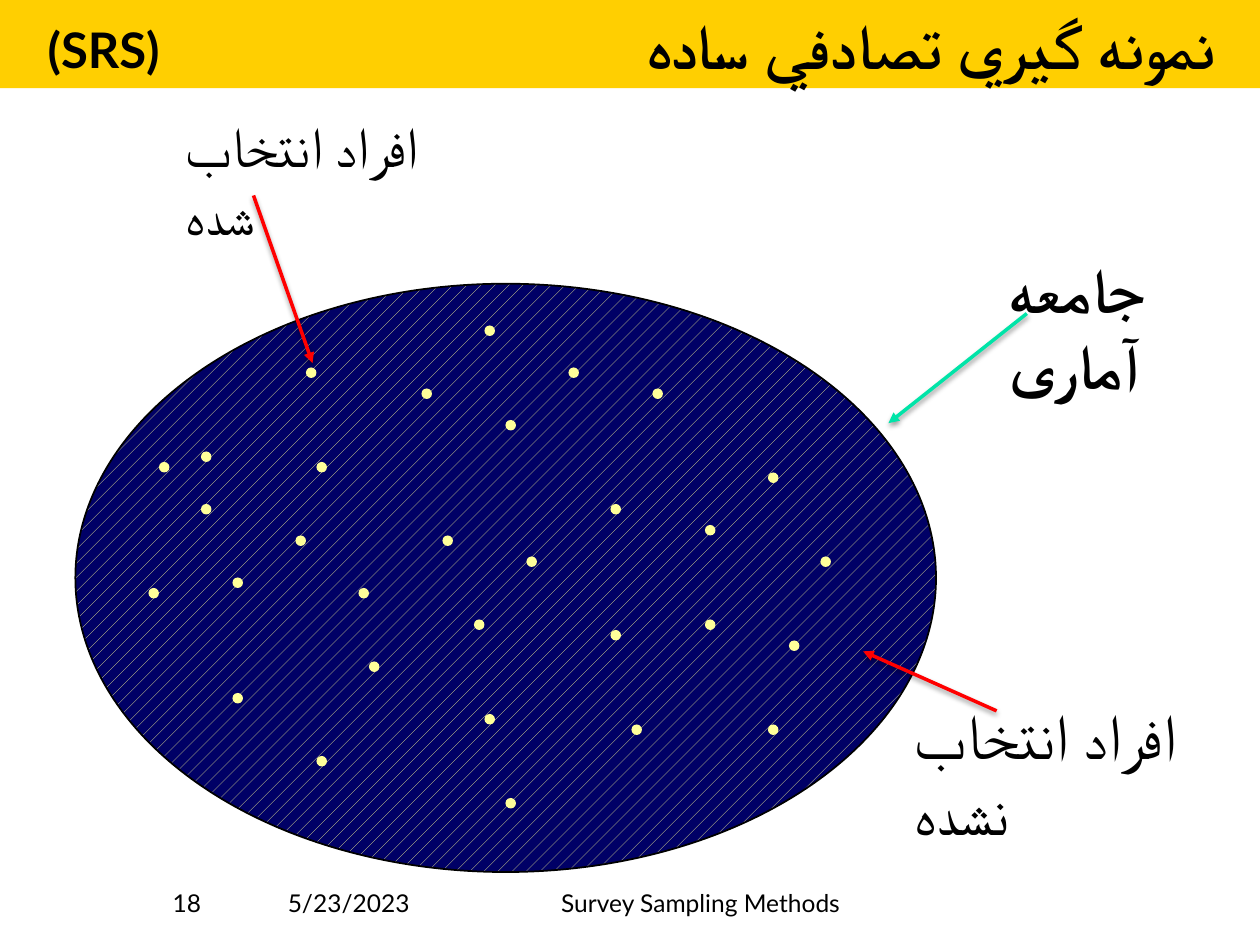
from lxml.etree import SubElement
from pptx import Presentation
from pptx.dml.color import RGBColor
from pptx.enum.dml import MSO_PATTERN
from pptx.enum.shapes import MSO_CONNECTOR, MSO_SHAPE
from pptx.enum.text import MSO_ANCHOR, PP_ALIGN
from pptx.oxml.ns import qn
from pptx.util import Cm, Pt

BLACK = RGBColor(0x00, 0x00, 0x00)
NAVY = RGBColor(0x00, 0x00, 0x66)
CREAM = RGBColor(0xFF, 0xFF, 0x99)
GOLD = RGBColor(0xFF, 0xCF, 0x01)
RED = RGBColor(0xFF, 0x00, 0x00)
GREEN = RGBColor(0x00, 0xE4, 0xA8)
FONT = "Lato"

TITLE = "نمونه گيري تصادفي ساده"
ABBREVIATION = "(SRS)"

# Labels: text, left, top, width, height (cm), size, bold
LABELS = [
    ("جامعه آماری", 20.09, 4.93, 4.19, 3.33, 36, True),
    ("افراد انتخاب شده", 3.51, 2.13, 6.27, 1.63, 32, False),
    ("افراد انتخاب نشده", 18.21, 13.92, 7.19, 1.8, 36, False),
]

# Arrows: start x, y, end x, y (cm), colour
ARROWS = [
    (5.11, 3.94, 6.3, 7.32, RED),
    (20.7, 6.32, 17.91, 8.53, GREEN),
    (20.09, 14.33, 17.4, 13.13, RED),
]

# Footer: text, left, width (cm), alignment
FOOTERS = [
    ("18", 3.23, 5.28, PP_ALIGN.LEFT),
    ("5/23/2023", 3.23, 5.28, PP_ALIGN.RIGHT),
    ("Survey Sampling Methods", 10.1, 8.05, PP_ALIGN.CENTER),
]

# Members of the population: column, row on a grid of dot-sized cells
DOT = 2.54 / 12
GRID_LEFT = 2.57
MEMBERS = [
    (10, 55), (18, 72), (10, 66), (22, 56), (7, 43), (7, 48), (2, 56),
    (3, 44), (18, 44), (28, 37), (46, 48), (42, 35), (30, 51), (38, 53),
    (33, 59), (16, 51), (48, 69), (34, 68), (50, 37), (36, 40), (61, 69),
    (63, 61), (66, 53), (61, 45), (17, 35), (23, 63), (34, 31), (36, 76),
    (55, 50), (55, 59), (46, 60),
]


def add_preset(page, preset, left, top, width, height):
    shape = page.shapes.add_shape(preset, Cm(left), Cm(top), Cm(width), Cm(height))
    shape.shadow.inherit = False
    shape.line.fill.background()
    return shape


def write(shape, text, size, bold=False, align=PP_ALIGN.LEFT,
          anchor=MSO_ANCHOR.TOP, rtl=False):
    frame = shape.text_frame
    frame.word_wrap = True
    frame.vertical_anchor = anchor
    para = frame.paragraphs[0]
    para.text = text
    para.alignment = align
    para.font.name = FONT
    para.font.size = Pt(size)
    para.font.bold = bold
    para.font.color.rgb = BLACK
    # Persian letters take the complex-script font
    SubElement(para.font._rPr, qn("a:cs"), typeface=FONT)
    if rtl:
        para._p.get_or_add_pPr().set("rtl", "1")


def add_text(page, left, top, width, height, *args, **options):
    box = page.shapes.add_textbox(Cm(left), Cm(top), Cm(width), Cm(height))
    write(box, *args, **options)


def add_arrow(page, x1, y1, x2, y2, color):
    arrow = page.shapes.add_connector(
        MSO_CONNECTOR.STRAIGHT, Cm(x1), Cm(y1), Cm(x2), Cm(y2))
    arrow.line.color.rgb = color
    arrow.line.width = Pt(2)
    SubElement(arrow.line._get_or_add_ln(), qn("a:tailEnd"), type="triangle")
    # Soft shadow straight below the line
    effects = SubElement(arrow._element.spPr, qn("a:effectLst"))
    shadow = SubElement(effects, qn("a:outerShdw"), blurRad=str(Pt(3.1)),
                        dist=str(Pt(1.6)), dir="5400000", rotWithShape="0")
    tint = SubElement(shadow, qn("a:srgbClr"), val=str(BLACK))
    SubElement(tint, qn("a:alpha"), val="38000")


def main():
    deck = Presentation()
    deck.slide_width, deck.slide_height = Cm(25.4), Cm(19.05)
    page = deck.slides.add_slide(deck.slide_layouts[6])

    # Population
    population = add_preset(page, MSO_SHAPE.OVAL, 1.52, 5.72, 17.35, 11.86)
    population.fill.patterned()
    population.fill.pattern = MSO_PATTERN.PERCENT_10
    population.fill.fore_color.rgb = CREAM
    population.fill.back_color.rgb = NAVY
    population.line.color.rgb = BLACK
    population.line.width = Pt(1)

    for column, row in MEMBERS:
        member = add_preset(page, MSO_SHAPE.OVAL, GRID_LEFT + column * DOT,
                            row * DOT, DOT, DOT)
        member.fill.solid()
        member.fill.fore_color.rgb = CREAM

    # Labels and their arrows
    for text, left, top, width, height, size, bold in LABELS:
        add_text(page, left, top, width, height, text, size, bold)
    for arrow in ARROWS:
        add_arrow(page, *arrow)

    # Title band, with the abbreviation at its left end
    band = add_preset(page, MSO_SHAPE.RECTANGLE, 0, 0, 25.4, 1.78)
    band.fill.solid()
    band.fill.fore_color.rgb = GOLD
    band.text_frame.margin_right = Cm(0.91)
    write(band, TITLE, 36, True, PP_ALIGN.RIGHT, MSO_ANCHOR.MIDDLE, rtl=True)
    add_text(page, 0.71, 0.1, 4, 1.78, ABBREVIATION, 28, True,
             anchor=MSO_ANCHOR.MIDDLE, rtl=True)

    # Footer
    for text, left, width, align in FOOTERS:
        add_text(page, left, 17.35, width, 1.27, text, 14, align=align,
                 anchor=MSO_ANCHOR.BOTTOM, rtl=True)

    deck.save("out.pptx")


if __name__ == "__main__":
    main()
